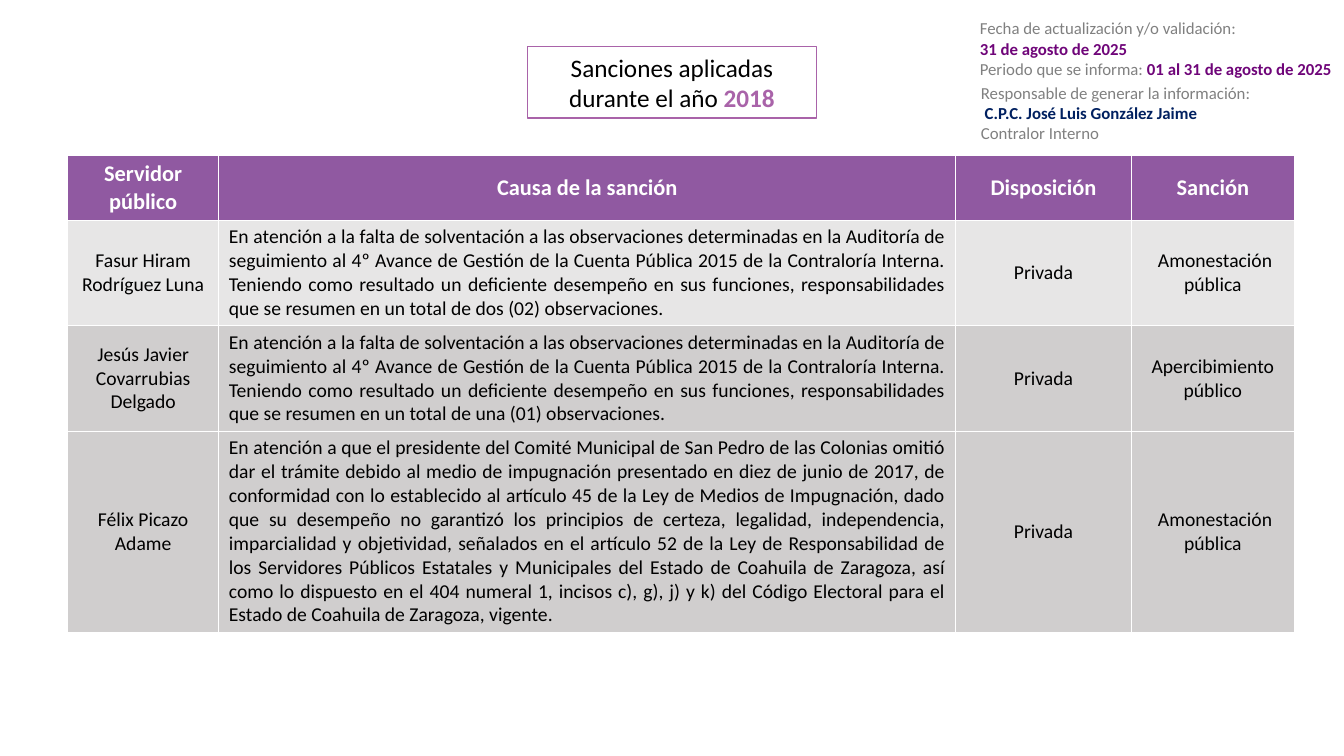
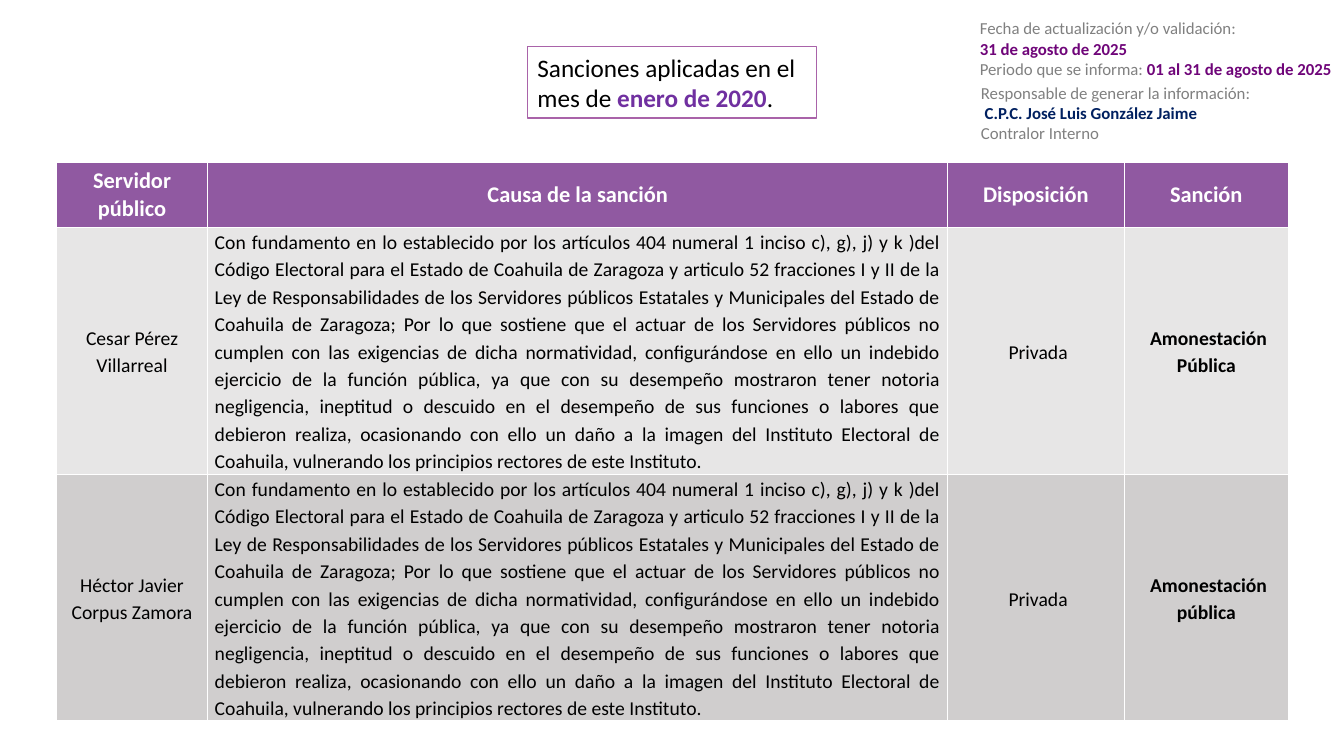
from pptx import Presentation
from pptx.dml.color import RGBColor
from pptx.enum.text import MSO_ANCHOR, MSO_AUTO_SIZE, PP_ALIGN
from pptx.util import Inches, Pt

FONT = "Calibri"
BLACK = RGBColor(0, 0, 0)
WHITE = RGBColor(255, 255, 255)
GRAY = RGBColor(0x80, 0x80, 0x80)
NAVY = RGBColor(0x00, 0x20, 0x60)
PLUM = RGBColor(0x6F, 0x05, 0x79)
MAUVE = RGBColor(0xA9, 0x63, 0xA9)
VIOLET = RGBColor(0x70, 0x30, 0xA0)
HEAD = RGBColor(0x90, 0x59, 0xA1)
LIGHT = RGBColor(0xE7, 0xE6, 0xE6)
DARK = RGBColor(0xD0, 0xCE, 0xCE)
LEFT, CENTER, JUST = PP_ALIGN.LEFT, PP_ALIGN.CENTER, PP_ALIGN.JUSTIFY

# Each run is (text, colour, bold)
DATES = [
    [("Fecha de actualización y/o validación:", GRAY, False)],
    [("31 de agosto de 2025", PLUM, True)],
    [("Periodo que se informa: ", GRAY, False),
     ("01 al 31 de agosto de 2025", PLUM, True)],
]
OWNER = [
    [("Responsable de generar la información:", GRAY, False)],
    [(" ", GRAY, False), ("C.P.C. José Luis González Jaime", NAVY, True)],
    [("Contralor Interno", GRAY, False)],
]
HEADERS = ("Servidor público", "Causa de la sanción", "Disposición", "Sanción")

AUDIT = (
    "En atención a la falta de solventación a las observaciones determinadas "
    "en la Auditoría de seguimiento al 4º Avance de Gestión de la Cuenta "
    "Pública 2015 de la Contraloría Interna. Teniendo como resultado un "
    "deficiente desempeño en sus funciones, responsabilidades que se resumen "
    "en un total de {} observaciones.")
APPEAL = (
    "En atención a que el presidente del Comité Municipal de San Pedro de las "
    "Colonias omitió dar el trámite debido al medio de impugnación presentado "
    "en diez de junio de 2017, de conformidad con lo establecido al artículo "
    "45 de la Ley de Medios de Impugnación, dado que su desempeño no garantizó "
    "los principios de certeza, legalidad, independencia, imparcialidad y "
    "objetividad, señalados en el artículo 52 de la Ley de Responsabilidad de "
    "los Servidores Públicos Estatales y Municipales del Estado de Coahuila de "
    "Zaragoza, así como lo dispuesto en el 404 numeral 1, incisos c), g), j) y "
    "k) del Código Electoral para el Estado de Coahuila de Zaragoza, vigente.")
NEGLECT = (
    "Con fundamento en lo establecido por los artículos 404 numeral 1 inciso "
    "c), g), j) y k )del Código Electoral para el Estado de Coahuila de "
    "Zaragoza y articulo 52 fracciones I y II de la Ley de Responsabilidades "
    "de los Servidores públicos Estatales y Municipales del Estado de Coahuila "
    "de Zaragoza; Por lo que sostiene que el actuar de los Servidores públicos "
    "no cumplen con las exigencias de dicha normatividad, configurándose en "
    "ello un indebido ejercicio de la función pública, ya que con su desempeño "
    "mostraron tener notoria negligencia, ineptitud o descuido en el desempeño "
    "de sus funciones o labores que debieron realiza, ocasionando con ello un "
    "daño a la imagen del Instituto Electoral de Coahuila, vulnerando los "
    "principios rectores de este Instituto.")

SLIDES = [
    dict(
        title=[("Sanciones aplicadas durante el año ", BLACK, False),
               ("2018", MAUVE, True)],
        align=CENTER, at=(0.67, 1.54), cols=(1.5, 7.31, 1.74, 1.62),
        heights=(0.64, 1.04, 1.04, 1.98), fills=(LIGHT, DARK, DARK),
        pad=(0.1, 0.05), spacing=1, strong=False,
        rows=[
            ("Fasur Hiram Rodríguez Luna", AUDIT.format("dos (02)"),
             "Privada", " Amonestación pública"),
            ("Jesús Javier Covarrubias Delgado", AUDIT.format("una (01)"),
             "Privada", "Apercibimiento público"),
            ("Félix Picazo Adame", APPEAL,
             "Privada", " Amonestación pública"),
        ]),
    dict(
        title=[("Sanciones aplicadas en el mes de ", BLACK, False),
               ("enero de 2020", VIOLET, True), (".", BLACK, False)],
        align=LEFT, at=(0.56, 1.61), cols=(1.5, 7.34, 1.75, 1.63),
        heights=(0.64, 2.45, 2.45), fills=(LIGHT, DARK),
        pad=(0.07, 0), spacing=1.15, strong=True,
        rows=[
            ("Cesar Pérez Villarreal", NEGLECT,
             " Privada", " Amonestación Pública"),
            ("Héctor Javier Corpus Zamora", NEGLECT,
             " Privada", " Amonestación pública"),
        ]),
]


def write(frame, lines, size, align=LEFT):
    """Fill a text frame with one paragraph per list of runs."""
    for i, runs in enumerate(lines):
        para = frame.add_paragraph() if i else frame.paragraphs[0]
        para.alignment = align
        para.font.name, para.font.size = FONT, Pt(size)
        for words, color, bold in runs:
            run = para.add_run()
            run.text = words
            run.font.color.rgb, run.font.bold = color, bold


def add_title(slide, runs, align):
    box = slide.shapes.title
    box.left, box.top = Inches(5.23), Inches(0.46)
    box.width, box.height = Inches(2.87), Inches(0.71)
    box.fill.solid()
    box.fill.fore_color.rgb = WHITE
    box.line.color.rgb, box.line.width = MAUVE, Pt(1)
    box.text_frame.auto_size = MSO_AUTO_SIZE.NONE
    box.text_frame.vertical_anchor = MSO_ANCHOR.MIDDLE
    write(box.text_frame, [runs], 18, align)


def add_note(slide, lines, left, top, width, wrap):
    box = slide.shapes.add_textbox(*map(Inches, (left, top, width, 0.71)))
    box.text_frame.word_wrap = wrap
    write(box.text_frame, lines, 12)


def fill_cell(cell, words, fill, color, size, bold, align, pad, spacing):
    cell.fill.solid()
    cell.fill.fore_color.rgb = fill
    cell.vertical_anchor = MSO_ANCHOR.MIDDLE
    cell.margin_left = cell.margin_right = Inches(pad[0])
    cell.margin_top = cell.margin_bottom = Inches(pad[1])
    write(cell.text_frame, [[(words, color, bold)]], size, align)
    cell.text_frame.paragraphs[0].line_spacing = spacing


def add_grid(slide, data):
    cols, heights = data["cols"], data["heights"]
    size = (*data["at"], sum(cols), sum(heights))
    grid = slide.shapes.add_table(
        len(heights), len(cols), *map(Inches, size)).table
    grid.horz_banding = False
    for col, width in zip(grid.columns, cols):
        col.width = Inches(width)
    for row, height in zip(grid.rows, heights):
        row.height = Inches(height)
    for c, words in enumerate(HEADERS):
        fill_cell(grid.cell(0, c), words, HEAD, WHITE, 16, True, CENTER,
                  (0.1, 0.05), 1)
    for r, (row, fill) in enumerate(zip(data["rows"], data["fills"]), 1):
        for c, words in enumerate(row):
            bold = data["strong"] and c == len(row) - 1
            fill_cell(grid.cell(r, c), words, fill, BLACK, 14, bold,
                      JUST if c == 1 else CENTER, data["pad"], data["spacing"])


def main():
    deck = Presentation()
    deck.slide_width, deck.slide_height = Inches(13.33), Inches(7.5)
    for data in SLIDES:
        slide = deck.slides.add_slide(deck.slide_layouts[5])
        add_grid(slide, data)
        add_title(slide, data["title"], data["align"])
        add_note(slide, DATES, 9.62, 0.13, 3.74, False)
        add_note(slide, OWNER, 9.63, 0.77, 3.11, True)
    deck.save("out.pptx")


if __name__ == "__main__":
    main()
